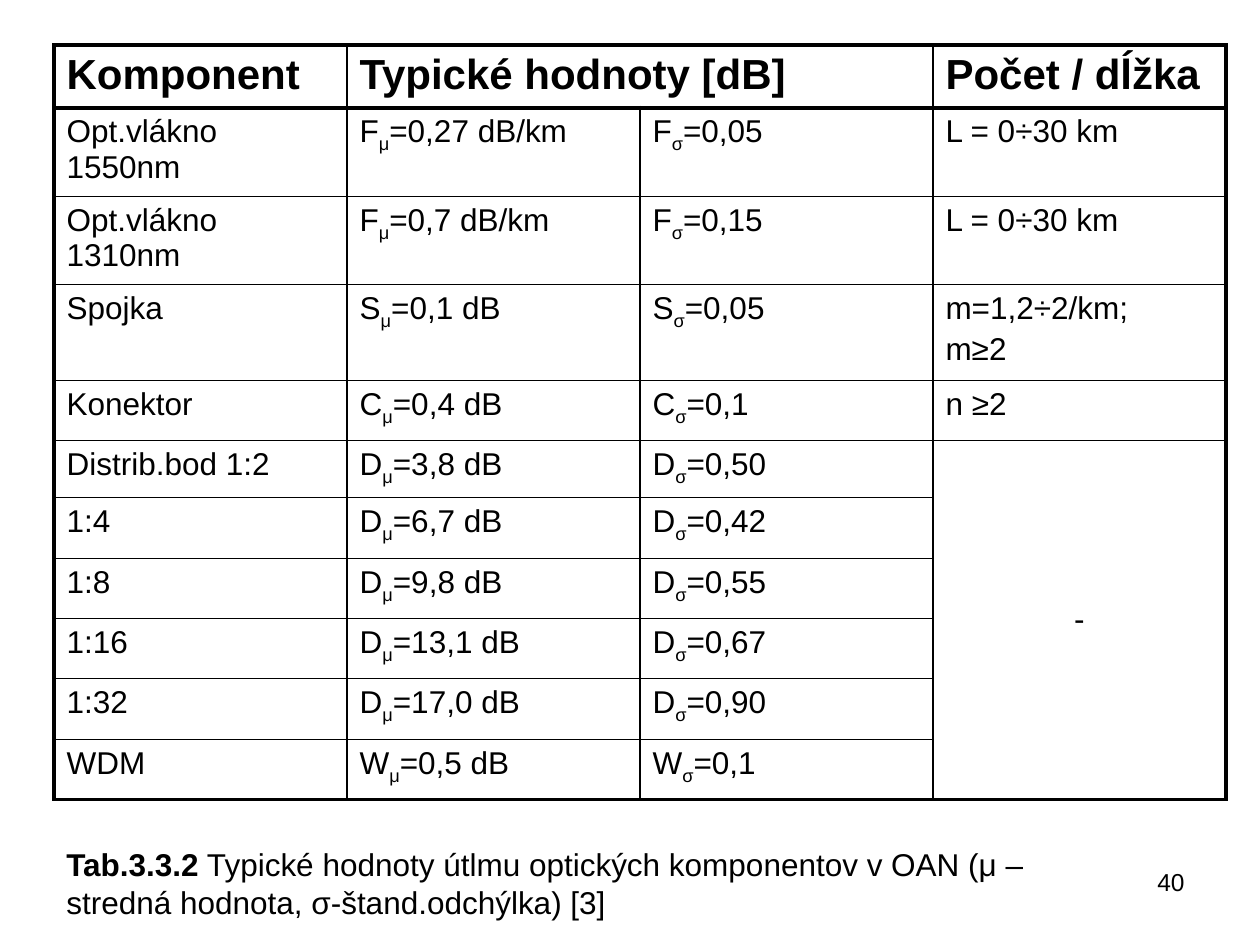
from dataclasses import dataclass

from lxml import etree
from pptx import Presentation
from pptx import util as u
from pptx.dml.color import RGBColor
from pptx.enum import text
from pptx.oxml.ns import qn


@dataclass(frozen=True)
class Theme:
    font: str = "Arial"
    ink: str = "000000"
    header: int = 24
    body: int = 18
    number: int = 14
    thin: float = 1
    frame: float = 2.25
    rule: float = 3


HEADINGS = ["Komponent", "Typické hodnoty [dB]", "", "Počet / dĺžka"]
COMPONENTS = [
    ("Opt.vlákno 1550nm", "F", "0,27 dB/km", "0,05", "L = 0÷30 km"),
    ("Opt.vlákno 1310nm", "F", "0,7 dB/km", "0,15", "L = 0÷30 km"),
    ("Spojka", "S", "0,1 dB", "0,05", "m=1,2÷2/km;\nm≥2"),
    ("Konektor", "C", "0,4 dB", "0,1", "n ≥2"),
    ("Distrib.bod 1:2", "D", "3,8 dB", "0,50", "-"),
    ("1:4", "D", "6,7 dB", "0,42", ""),
    ("1:8", "D", "9,8 dB", "0,55", ""),
    ("1:16", "D", "13,1 dB", "0,67", ""),
    ("1:32", "D", "17,0 dB", "0,90", ""),
    ("WDM", "W", "0,5 dB", "0,1", ""),
]
COLUMN_WIDTH = 293
ROW_HEIGHTS = [63, 88, 88, 96, 60, 57, 61, 60, 60, 61, 60]
MERGES = [((0, 1), (0, 2)), ((5, 3), (10, 3))]


def px(length):
    return u.Inches(length / 126)


class SlideBuilder:
    def __init__(self, deck, theme):
        self.theme = theme
        self.slide = deck.slides.add_slide(deck.slide_layouts[6])

    def span(self, para, words, size, bold=False, subscript=False):
        span = para.add_run()
        span.text = words
        span.font.name = self.theme.font
        span.font.size = u.Pt(size)
        span.font.bold = bold
        span.font.color.rgb = RGBColor.from_string(self.theme.ink)
        if subscript:
            span.font._element.set("baseline", "-25000")

    def text_box(self, place, spans, size, align=text.PP_ALIGN.LEFT):
        box = self.slide.shapes.add_textbox(*map(px, place))
        box.text_frame.word_wrap = True
        para = box.text_frame.paragraphs[0]
        para.alignment = align
        for words, bold in spans:
            self.span(para, words, size, bold)

    def cell_text(self, cell, content, size, bold):
        frame = cell.text_frame
        for index, line in enumerate(content.split("\n")):
            para = frame.add_paragraph() if index else frame.paragraphs[0]
            if index:
                para.space_before = u.Pt(size * 0.2)
            for part, words in enumerate(line.split("_")):
                if part:
                    self.span(para, words[0], size, bold, subscript=True)
                    words = words[1:]
                self.span(para, words, size, bold)

    def borders(self, cell, widths):
        properties = cell._tc.get_or_add_tcPr()
        for side, width in zip("LRTB", widths):
            line = etree.SubElement(properties, qn(f"a:ln{side}"), w=str(u.Pt(width)))
            fill = etree.SubElement(line, qn("a:solidFill"))
            etree.SubElement(fill, qn("a:srgbClr"), val=self.theme.ink)

    def table(self, left, top, rows, heights, column_width, merges):
        theme = self.theme
        columns = len(rows[0])
        frame = self.slide.shapes.add_table(
            len(rows), columns, px(left), px(top),
            px(column_width * columns), px(sum(heights)))
        table = frame.table
        table.first_row = table.horz_banding = False
        for column in table.columns:
            column.width = px(column_width)
        for row, height in zip(table.rows, heights):
            row.height = px(height)
        for start, end in merges:
            table.cell(*start).merge(table.cell(*end))
        for r, row in enumerate(rows):
            for c, content in enumerate(row):
                cell = table.cell(r, c)
                last_row = r + (cell.span_height if cell.is_merge_origin else 1)
                self.borders(cell, (
                    theme.frame if c == 0 else theme.thin,
                    theme.frame if c == columns - 1 else theme.thin,
                    {0: theme.frame, 1: theme.rule}.get(r, theme.thin),
                    {1: theme.rule, len(rows): theme.frame}.get(last_row, theme.thin)))
                cell.fill.background()
                if content:
                    size = theme.body if r else theme.header
                    self.cell_text(cell, content, size, bold=r == 0)
        return table


def main():
    theme = Theme()
    deck = Presentation()
    deck.slide_width, deck.slide_height = px(1260), px(945)
    page = SlideBuilder(deck, theme)

    page.text_box((903, 861, 294, 66), [("40", False)], theme.number,
                  text.PP_ALIGN.RIGHT)

    rows = [HEADINGS] + [
        [name, f"{symbol}_μ={mean}", f"{symbol}_σ={deviation}", amount]
        for name, symbol, mean, deviation, amount in COMPONENTS]
    table = page.table(54, 45, rows, ROW_HEIGHTS, COLUMN_WIDTH, MERGES)
    dash = table.cell(5, 3)
    dash.vertical_anchor = text.MSO_ANCHOR.MIDDLE
    dash.text_frame.paragraphs[0].alignment = text.PP_ALIGN.CENTER

    caption = (" Typické hodnoty útlmu optických komponentov v OAN "
               "(μ –stredná hodnota, σ-štand.odchýlka) [3]")
    page.text_box((54, 839, 1081, 88), [("Tab.3.3.2", True), (caption, False)],
                  theme.body)
    deck.save("out.pptx")


if __name__ == "__main__":
    main()
